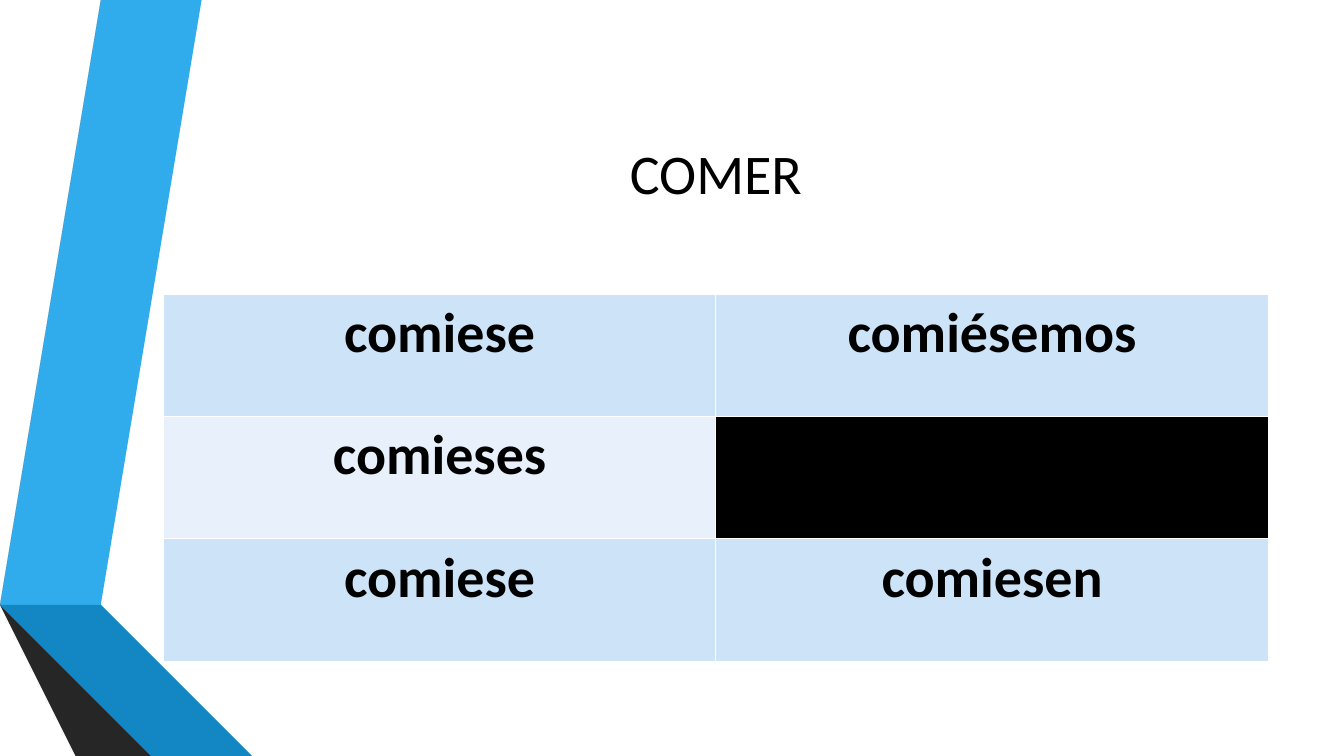
from pptx import Presentation, util as u
from pptx.dml.color import RGBColor
from pptx.enum import text
from pptx.oxml import parse_xml
from pptx.oxml.ns import nsdecls

WHITE, BLACK = "FFFFFF", "000000"
DARK_ROW, LIGHT_ROW = "CDE3F8", "E8F1FB"


def paint(fill, color):
    fill.solid()
    fill.fore_color.rgb = RGBColor.from_string(color)


def write(frame, words, size=40, color=BLACK, bold=False, anchor=text.MSO_ANCHOR.TOP):
    frame.word_wrap = True
    frame.vertical_anchor = anchor
    paragraph = frame.paragraphs[0]
    paragraph.alignment = text.PP_ALIGN.CENTER
    run = paragraph.add_run()
    run.text = words
    run.font.name = "Calibri"
    run.font.size = u.Pt(size)
    run.font.bold = bold
    run.font.color.rgb = RGBColor.from_string(color)


deck = Presentation()
deck.slide_width, deck.slide_height = u.Inches(13.33), u.Inches(7.5)
slide = deck.slides.add_slide(deck.slide_layouts[5])
paint(slide.background.fill, WHITE)

# Folded ribbons on the left, from back to front
ribbons = [
    ("30ACEC", [(0.5, 5.78), (0.77, 5.83), (1.73, 0), (1.45, 0)]),
    ("595959", [(1.39, 0), (1.11, 0), (0.16, 5.73), (0.44, 5.77)]),
    ("262626", [(0.16, 5.73), (1.45, 7.5), (1.51, 7.5)]),
    ("0C5A82", [(0.5, 5.79), (2.08, 7.5), (2.14, 7.5)]),
    ("1287C3", [(0.5, 5.78), (0.5, 5.79), (2.14, 7.5), (2.83, 7.5), (0.77, 5.83)]),
    ("404040", [(2.02, 7.5), (0.48, 5.83), (0.43, 5.78), (0.44, 5.77),
                (0.16, 5.73), (1.51, 7.5)]),
]
for color, corners in ribbons:
    outline = slide.shapes.build_freeform(*corners[0], scale=u.Inches(1))
    outline.add_line_segments(corners[1:], close=True)
    ribbon = outline.convert_to_shape()
    paint(ribbon.fill, color)
    ribbon.line.fill.background()
    ribbon.shadow.inherit = False

# Verb as title
left, width = u.Inches(1.62), u.Inches(10.96)
verb = slide.shapes.title
verb.left, verb.top, verb.width, verb.height = left, u.Inches(0.75), width, u.Inches(1.92)
write(verb.text_frame, "COMER", anchor=text.MSO_ANCHOR.MIDDLE)

# Conjugation: singular on the left, plural on the right
forms = [
    ("comiese", "comiésemos"),
    ("comieses", None),
    ("comiese", "comiesen"),
]
conjugation = slide.shapes.add_table(
    len(forms), 2, left, u.Inches(2.92), width, u.Inches(3.64)).table
for row, pair in enumerate(forms):
    for column, form in enumerate(pair):
        cell = conjugation.cell(row, column)
        if form:
            write(cell.text_frame, form, bold=True)
        # Thin white borders go before the fill in the cell properties
        for side in ("lnL", "lnR", "lnT", "lnB"):
            cell._tc.get_or_add_tcPr().append(parse_xml(
                f'<a:{side} {nsdecls("a")} w="12700"><a:solidFill>'
                f'<a:srgbClr val="{WHITE}"/></a:solidFill></a:{side}>'))
        paint(cell.fill, (LIGHT_ROW if row % 2 else DARK_ROW) if form else BLACK)

deck.save("out.pptx")
